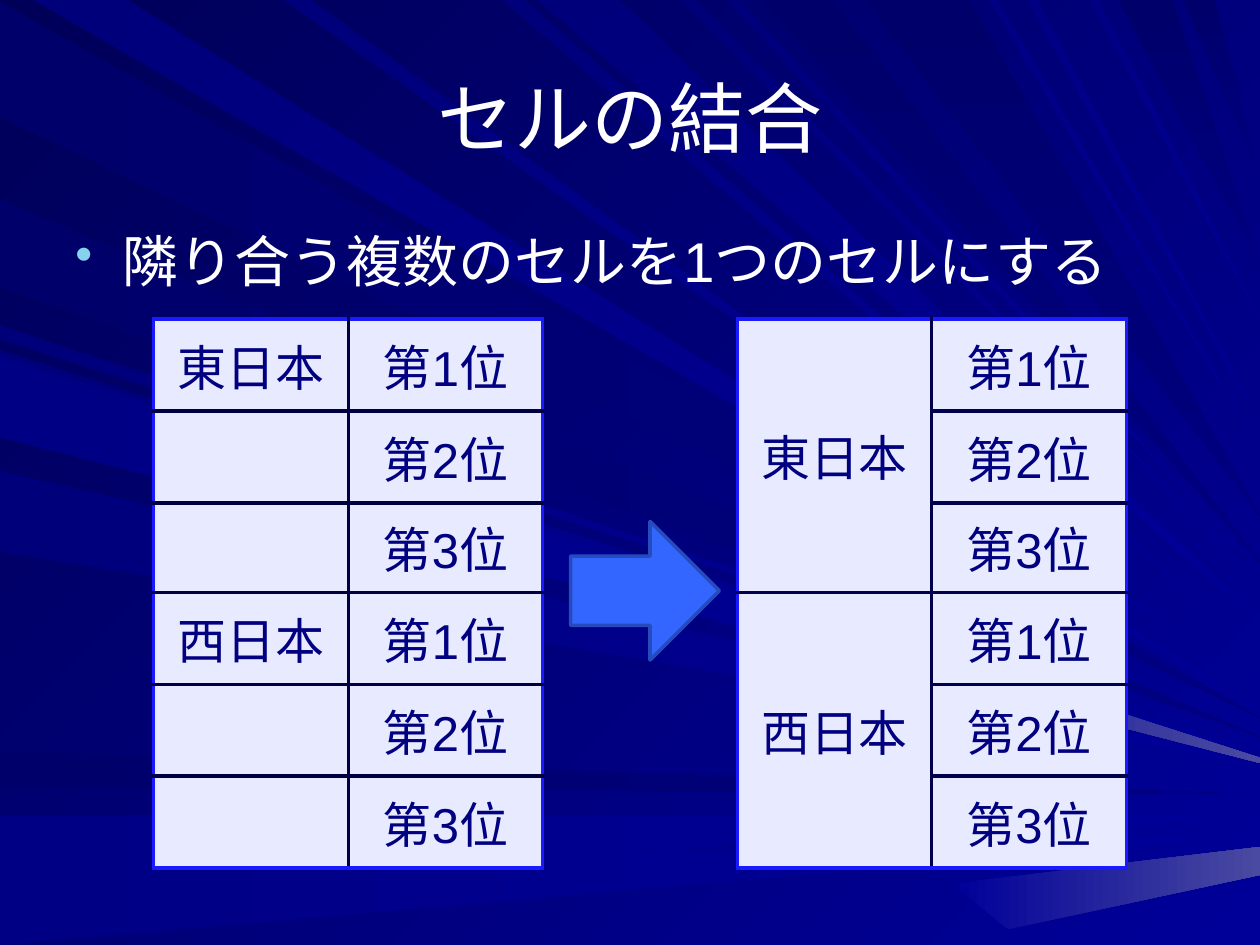
from lxml.etree import SubElement
from pptx import Presentation
from pptx.dml.color import RGBColor
from pptx.enum.shapes import MSO_SHAPE
from pptx.enum.text import MSO_ANCHOR, PP_ALIGN
from pptx.oxml.ns import qn
from pptx.util import Pt

FONT = "Arial"
COLORS = {
    "bg_dark": "000058", "bg_light": "000099",
    "deep": "00006B", "middle": "000080", "soft": "00007B", "faint": "000085",
    "glow": "4A4AA1", "white": "FFFFFF", "bullet": "86D1EC",
    "cell": "E8EAFF", "cell_text": "000080", "outer": "1A1AFF",
    "inner_left": "000040", "inner_right": "00004C",
    "arrow": "3366FF", "arrow_line": "264BBD",
}

# Rays in points: two starts (top edge, or left edge if negative), end on right edge
RAYS = {
    ("deep", "middle"): [
        (-1, -67, 410), (-429, -449, 454), (-114, -164, 421),
        (436, 476, 321), (639, 670, 151), (676, 694, 101),
    ],
    ("soft", "bg_light"): [
        (19, 73, 405), (-186, -194, 424), (287, 300, 373), (307, 354, 355),
        (389, 397, 333), (-200, -246, 431), (-269, -315, 436),
        (162, 178, 396), (415, 423, 327),
    ],
    ("deep", "middle", "front"): [(494, 554, 295)],
    ("faint", "bg_light"): [
        (-466, -507, 466), (-496, -540, 477), (565, 570, 257),
        (587, 593, 242), (623, 628, 183), (-204, -250, 434),
    ],
}
GLOWS = [
    [(544, 505), (576, 531), (720, 500), (720, 484)],
    [(459, 349), (456, 368), (720, 436), (720, 433)],
]


def rgb(name):
    return RGBColor.from_string(COLORS[name])


def paint(fill, start, end=None, angle=0):
    """Fill plainly, or with a linear gradient if an end colour is given."""
    if end is None:
        fill.solid()
        fill.fore_color.rgb = rgb(start)
        return
    fill.gradient()
    fill.gradient_angle = (360 - angle) % 360
    for stop, color in zip(fill.gradient_stops, (start, end)):
        stop.color.rgb = rgb(color)


def add_polygon(s, corners, start, end, angle=0):
    builder = s.shapes.build_freeform(*corners[0], scale=Pt(1))
    builder.add_line_segments(corners[1:], close=True)
    sp = builder.convert_to_shape()
    sp.shadow.inherit = False
    sp.line.fill.background()
    paint(sp.fill, start, end, angle)


def add_background(s):
    paint(s.background.fill, "bg_dark", "bg_light", 45)
    for (start, end, *_), rays in RAYS.items():
        for first, second, tip in rays:
            edge = [(max(v, 0), max(-v, 0)) for v in (first, second)]
            angle = 0 if first < 0 else 90 if start == "deep" else 45
            add_polygon(s, edge + [(720, tip)], start, end, angle)
    for corners in GLOWS:
        add_polygon(s, corners, "bg_light", "glow")


def add_bullet(p, char, color, percent, indent):
    pPr = p._p.get_or_add_pPr()
    pPr.set("marL", str(indent))
    pPr.set("indent", str(-indent))
    SubElement(SubElement(pPr, qn("a:buClr")), qn("a:srgbClr"), val=COLORS[color])
    SubElement(pPr, qn("a:buSzPct"), val=str(percent * 1000))
    SubElement(pPr, qn("a:buChar"), char=char)


def write(tf, text, size=28, color="white", align=PP_ALIGN.LEFT, bullet=None):
    p = tf.paragraphs[0]
    p.alignment = align
    if bullet:
        add_bullet(p, **bullet)
    r = p.add_run()
    r.text = text
    r.font.size = Pt(size)
    r.font.name = FONT
    r.font.color.rgb = rgb(color)


def add_text(s, x, y, w, h, text, anchor=MSO_ANCHOR.TOP, **fmt):
    tf = s.shapes.add_textbox(Pt(x), Pt(y), Pt(w), Pt(h)).text_frame
    tf.word_wrap = True
    tf.vertical_anchor = anchor
    write(tf, text, **fmt)


def set_borders(cell, **edges):
    tcPr = cell._tc.get_or_add_tcPr()
    for side in "LRTB":
        ln = SubElement(tcPr, qn(f"a:ln{side}"), w=str(Pt(2.25)))
        color = edges.get(side)
        if color:
            solid = SubElement(ln, qn("a:solidFill"))
            SubElement(solid, qn("a:srgbClr"), val=COLORS[color])
        else:
            SubElement(ln, qn("a:noFill"))


def fill_cell(cell, text):
    paint(cell.fill, "cell")
    cell.vertical_anchor = MSO_ANCHOR.MIDDLE
    if text:
        write(cell.text_frame, text, color="cell_text", align=PP_ALIGN.CENTER)


def fill_half(table, left, inner, merged):
    """Fill the region and rank columns that start at column left."""
    for row in range(6):
        region, rank = divmod(row, 3)
        top = "outer" if row == 0 else inner
        bottom = "outer" if row == 5 else inner
        name, place = table.cell(row, left), table.cell(row, left + 1)
        name_top, name_bottom = top, bottom
        if merged:
            name_top = top if rank == 0 else None
            name_bottom = (inner, "outer")[region] if rank != 1 else None
        set_borders(name, L="outer", R=inner, T=name_top, B=name_bottom)
        set_borders(place, L=inner, R="outer", T=top, B=bottom)
        fill_cell(name, ("東日本", "西日本")[region] if rank == 0 else "")
        fill_cell(place, f"第{rank + 1}位")
    if merged:
        for row in (0, 3):
            table.cell(row, left).merge(table.cell(row + 2, left))


def add_rank_table(s, x, y, col_width, row_heights):
    table = s.shapes.add_table(6, 5, Pt(x), Pt(y), Pt(5 * col_width),
                               Pt(sum(row_heights))).table
    table.first_row = table.horz_banding = False
    for col in table.columns:
        col.width = Pt(col_width)
    for row, height in zip(table.rows, row_heights):
        row.height = Pt(height)
    fill_half(table, 0, "inner_left", merged=False)
    fill_half(table, 3, "inner_right", merged=True)
    # Empty column between the two halves
    for row in range(6):
        gap = table.cell(row, 2)
        set_borders(gap, L="outer", R="outer")
        gap.fill.background()


def add_arrow(s, x, y, w, h):
    sp = s.shapes.add_shape(MSO_SHAPE.RIGHT_ARROW, Pt(x), Pt(y), Pt(w), Pt(h))
    sp.shadow.inherit = False
    paint(sp.fill, "arrow")
    sp.line.color.rgb = rgb("arrow_line")
    sp.line.width = Pt(2)


def main():
    prs = Presentation()
    prs.slide_width, prs.slide_height = Pt(720), Pt(540)
    s = prs.slides.add_slide(prs.slide_layouts[6])
    add_background(s)

    # Title and bullet
    add_text(s, 36, 21.6, 648, 90, "セルの結合", anchor=MSO_ANCHOR.MIDDLE,
             size=44, align=PP_ALIGN.CENTER)
    add_text(s, 36, 126, 648, 356.4, "隣り合う複数のセルを1つのセルにする", size=32,
             bullet=dict(char="•", color="bullet", percent=90, indent=Pt(27)))

    # Table before and after merging
    add_rank_table(s, 87.84, 182.2, 111.17, [52.56, 52.56, 51.12] + [52.56] * 3)
    add_arrow(s, 326, 298, 85, 79.2)

    prs.save("out.pptx")


if __name__ == "__main__":
    main()
